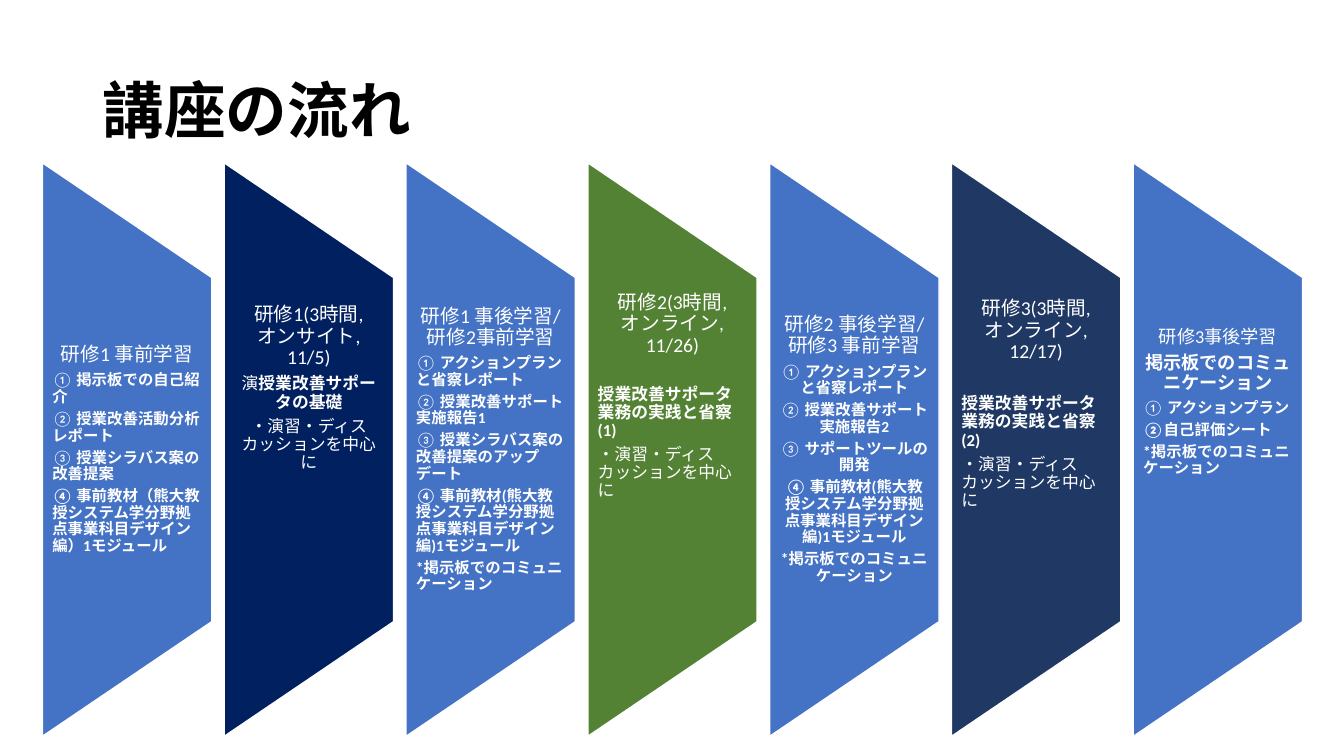
from pptx import Presentation
from pptx.dml.color import RGBColor
from pptx.enum.shapes import MSO_SHAPE as Shape
from pptx.enum.text import MSO_ANCHOR as Anchor, PP_ALIGN as Align
from pptx.oxml.ns import qn
from pptx.util import Inches, Pt
from lxml.etree import SubElement

WHITE = RGBColor(0xFF, 0xFF, 0xFF)
BLACK = RGBColor(0x00, 0x00, 0x00)
BLUE = RGBColor(0x44, 0x72, 0xC4)
NAVY = RGBColor(0x00, 0x20, 0x60)
GREEN = RGBColor(0x54, 0x82, 0x35)
SLATE = RGBColor(0x20, 0x38, 0x64)

TITLE_FONT = "Noto Sans CJK JP"
BODY_FONT = "Calibri"
FIRST_LEFT, LAST_LEFT = 0.42, 11.24
BAND_WIDTH, BAND_HEIGHT = 1.68, 5.69
TEXT_HEIGHT = 3.41
CENTER_Y = 4.46
MODULE = "④ 事前教材(熊大教授システム学分野拠点事業科目デザイン編)1モジュール"
BOARD = "*掲示板でのコミュニケーション"
PRACTICE = "・演習・ディスカッションを中心に"


def line(plain="", bold="", size=11, align=Align.LEFT, gap=0):
    return {"plain": plain, "bold": bold, "size": size, "align": align, "gap": gap}


def heading(text, size=14, gap=0):
    return line(text, size=size, align=Align.CENTER, gap=gap)


def items(*pairs, align=Align.LEFT):
    return [line(plain, bold, align=align) for plain, bold in pairs]


def session(title, topic, gap):
    return [heading(title, gap=gap), line(bold=topic, size=12), line(PRACTICE, size=12)]


STAGES = [
    (BLUE, None, [heading("研修1 事前学習")] + items(
        ("① ", "掲示板での自己紹介"),
        ("② ", "授業改善活動分析レポート"),
        ("③ ", "授業シラバス案の改善提案"),
        ("", "④ 事前教材（熊大教授システム学分野拠点事業科目デザイン編）1モジュール"))),
    (NAVY, 0.27, [
        heading("研修1(3時間,\vオンサイト, 11/5)"),
        line("演", "授業改善サポータの基礎", 12, Align.CENTER),
        line(PRACTICE, size=12, align=Align.CENTER)]),
    (BLUE, None, [heading("研修1 事後学習/ 研修2事前学習")] + items(
        ("① ", "アクションプランと省察レポート"),
        ("② ", "授業改善サポート実施報告1"),
        ("③ ", "授業シラバス案の改善提案のアップデート"),
        ("", MODULE),
        ("", BOARD))),
    (GREEN, 0.15, session("研修2(3時間,\vオンライン, 11/26)",
                          "授業改善サポータ業務の実践と省察(1)", 16)),
    (BLUE, None, [heading("研修2 事後学習/ 研修3 事前学習")] + items(
        ("① ", "アクションプランと省察レポート"),
        ("② ", "授業改善サポート実施報告2"),
        ("③ ", "サポートツールの開発"),
        ("", MODULE),
        ("", BOARD),
        align=Align.CENTER)),
    (SLATE, 0.21, session("研修3(3時間,\vオンライン, 12/17)",
                          "授業改善サポータ業務の実践と省察(2)", 18.5)),
    (BLUE, 0.5, [
        heading("研修3事後学習", 13),
        line(bold="掲示板でのコミュニケーション", size=13, align=Align.CENTER)] + items(
        ("① ", "アクションプラン"),
        ("", "②自己評価シート"),
        ("", BOARD))),
]


def apply(target, values):
    for name, value in values.items():
        setattr(target, name, value)


def add_run(paragraph, text, color, **font_values):
    run = paragraph.add_run()
    run.text = text
    apply(run.font, font_values)
    run.font.color.rgb = color
    SubElement(run.font._element, qn("a:ea"), typeface=font_values["name"])


def add_text_frame(slide, left, top, width, height, **frame_values):
    frame = slide.shapes.add_textbox(*map(Inches, (left, top, width, height))).text_frame
    apply(frame, {"word_wrap": True, **frame_values})
    return frame


def add_title(slide, text):
    frame = add_text_frame(slide, 0.92, 0.4, 11.5, 1.45, vertical_anchor=Anchor.MIDDLE)
    paragraph = frame.paragraphs[0]
    paragraph.line_spacing = 0.9
    add_run(paragraph, text, BLACK, name=TITLE_FONT, size=Pt(44), bold=True)


def add_band(slide, left, color):
    band = slide.shapes.add_shape(
        Shape.FLOWCHART_MANUAL_OPERATION,
        Inches(left + (BAND_WIDTH - BAND_HEIGHT) / 2), Inches(CENTER_Y - BAND_WIDTH / 2),
        Inches(BAND_HEIGHT), Inches(BAND_WIDTH))
    band.rotation = 270
    band.shadow.inherit = False
    band.fill.solid()
    band.fill.fore_color.rgb = color
    band.line.color.rgb = WHITE
    band.line.width = Pt(1)


def add_band_text(slide, left, top_inset, lines):
    frame = add_text_frame(
        slide, left, CENTER_Y - TEXT_HEIGHT / 2, BAND_WIDTH, TEXT_HEIGHT,
        margin_left=Inches(0.1), margin_right=Inches(0.1),
        margin_top=Inches(top_inset or 0), margin_bottom=0,
        vertical_anchor=Anchor.MIDDLE if top_inset is None else Anchor.TOP)
    for index, entry in enumerate(lines):
        paragraph = frame.add_paragraph() if index else frame.paragraphs[0]
        apply(paragraph, {
            "alignment": entry["align"],
            "line_spacing": 0.9,
            "space_after": Pt(0.35 * entry["size"] + entry["gap"]),
        })
        for weight in ("plain", "bold"):
            for part, text in enumerate(entry[weight].split("\v")):
                if part:
                    paragraph.add_line_break()
                if text:
                    add_run(paragraph, text, WHITE, name=BODY_FONT,
                            size=Pt(entry["size"]), bold=weight == "bold")


def main():
    deck = Presentation()
    apply(deck, {"slide_width": Inches(13.33), "slide_height": Inches(7.5)})
    slide = deck.slides.add_slide(deck.slide_layouts[6])
    add_title(slide, "講座の流れ")
    step = (LAST_LEFT - FIRST_LEFT) / (len(STAGES) - 1)
    for index, (color, top_inset, lines) in enumerate(STAGES):
        left = FIRST_LEFT + index * step
        add_band(slide, left, color)
        add_band_text(slide, left, top_inset, lines)
    deck.save("out.pptx")


if __name__ == "__main__":
    main()
